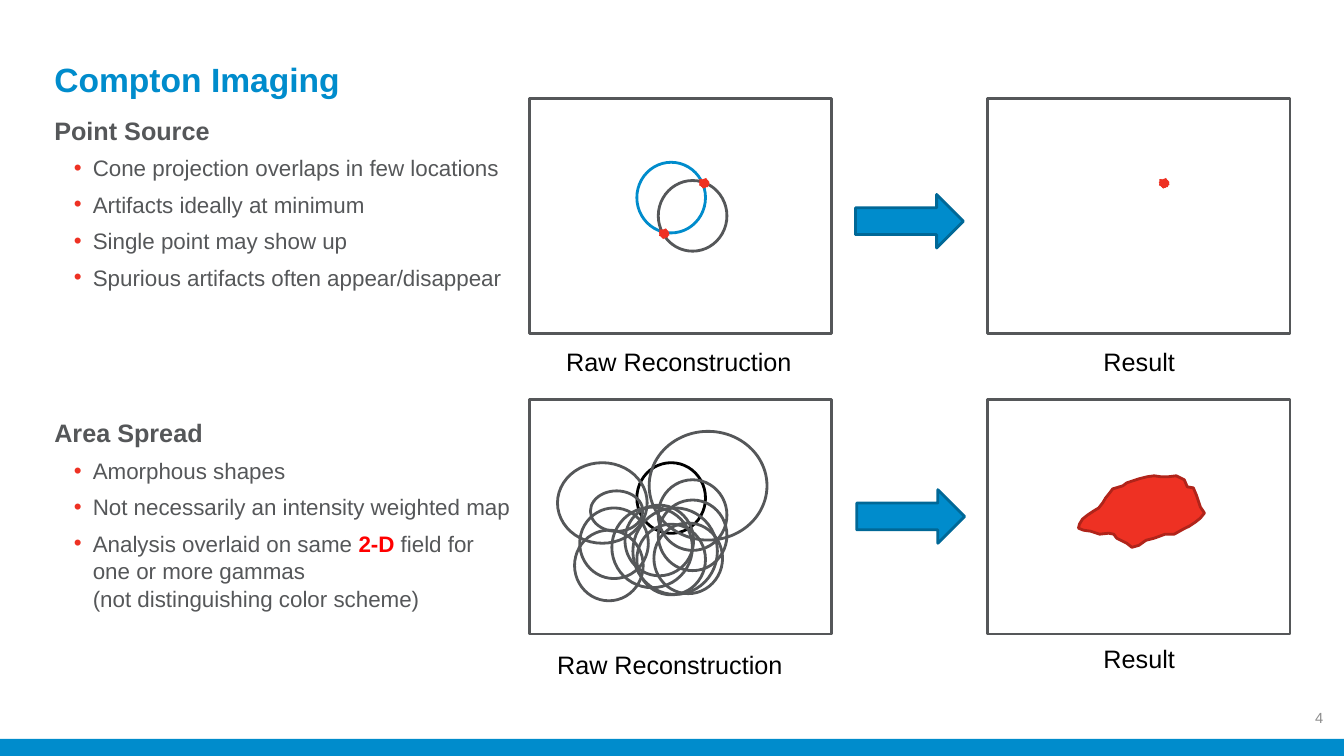
import pptx
import pptx.dml.color
import pptx.enum.shapes
import pptx.enum.text
import pptx.oxml
import pptx.oxml.ns
import pptx.util

Cm = pptx.util.Cm
Pt = pptx.util.Pt
SHAPE = pptx.enum.shapes.MSO_SHAPE
ALIGN = pptx.enum.text.PP_ALIGN
ANCHOR = pptx.enum.text.MSO_ANCHOR
BLUE, GRAY, RED, WHITE, BLACK = "008CCC", "555759", "EE3123", "FFFFFF", "000000"

deck = pptx.Presentation()
deck.slide_width, deck.slide_height = Cm(33.87), Cm(19.05)
page = deck.slides.add_slide(deck.slide_layouts[6])


def paint(shape, fill=None, line=None):
    """Set fill and outline from hex strings; None leaves the part empty."""
    shape.shadow.inherit = False
    if fill:
        shape.fill.solid()
        shape.fill.fore_color.rgb = pptx.dml.color.RGBColor.from_string(fill)
    else:
        shape.fill.background()
    if line:
        shape.line.color.rgb = pptx.dml.color.RGBColor.from_string(line)
        shape.line.width = Pt(2)
    else:
        shape.line.fill.background()


def write(para, text, size=16, color=GRAY, bold=False, align=None):
    """Add text to a paragraph; each newline becomes a line break."""
    para.alignment = align
    for number, piece in enumerate(text.split("\n")):
        if number:
            para.add_line_break()
        span = para.add_run()
        span.text = piece
        span.font.name = "Arial"
        span.font.size = Pt(size)
        span.font.bold = bold
        span.font.color.rgb = pptx.dml.color.RGBColor.from_string(color)


# Footer bar, title and page number
bar = page.shapes.add_shape(SHAPE.RECTANGLE, 0, Cm(18.62), deck.slide_width, Cm(0.43))
paint(bar, fill=BLUE)

title = page.shapes.add_textbox(Cm(1.12), Cm(0.84), Cm(31.6), Cm(1.65)).text_frame
title.word_wrap = True
title.vertical_anchor = ANCHOR.BOTTOM
title.margin_bottom = 0
write(title.paragraphs[0], "Compton Imaging", size=24, color=BLUE, bold=True)

number_box = page.shapes.add_textbox(Cm(31.9), Cm(17.58), Cm(1.7), Cm(1.02)).text_frame
number_box.word_wrap = True
number_box.vertical_anchor = ANCHOR.MIDDLE
write(number_box.paragraphs[0], "4", size=10.5, color="8C8C8C", align=ALIGN.RIGHT)

# Text sections: top, heading, bullets made of (text, format) spans
sections = [
    (2.74, "Point Source", [
        [("Cone projection overlaps in few locations", {})],
        [("Artifacts ideally at minimum", {})],
        [("Single point may show up", {})],
        [("Spurious artifacts often appear/disappear", {})],
    ]),
    (10.36, "Area Spread", [
        [("Amorphous shapes", {})],
        [("Not necessarily an intensity weighted map", {})],
        [("Analysis overlaid on same ", {}),
         ("2-D", {"color": "FF0000", "bold": True}),
         (" field for\none or more gammas\n(not distinguishing color scheme)", {})],
    ]),
]
for top, heading, bullets in sections:
    frame = page.shapes.add_textbox(Cm(1.12), Cm(top), Cm(12.2), Cm(5.5)).text_frame
    frame.word_wrap = True
    frame.paragraphs[0].line_spacing = 1.04
    write(frame.paragraphs[0], heading, size=18, bold=True)
    for spans in bullets:
        para = frame.add_paragraph()
        para.line_spacing = 1.04
        para.space_before = Pt(6)
        props = para._p.get_or_add_pPr()
        props.set("marL", str(Cm(0.97)))
        props.set("indent", str(-Cm(0.48)))
        namespace = pptx.oxml.ns.nsdecls("a")
        for xml in (f'<a:buClr {namespace}><a:srgbClr val="{RED}"/></a:buClr>',
                    f'<a:buFont {namespace} typeface="Arial"/>',
                    f'<a:buChar {namespace} char="•"/>'):
            props.append(pptx.oxml.parse_xml(xml))
        for text, style in spans:
            write(para, text, **style)

# Panels, two by two
for top in (2.49, 10.06):
    for left in (13.34, 24.89):
        panel = page.shapes.add_shape(SHAPE.RECTANGLE, Cm(left), Cm(top), Cm(7.62), Cm(5.92))
        paint(panel, fill=WHITE, line=GRAY)

# Captions
for left, top, width, caption in [
    (14.02, 8.61, 6.25, "Raw Reconstruction"),
    (27.56, 8.61, 2.34, "Result"),
    (13.79, 16.23, 6.25, "Raw Reconstruction"),
    (27.56, 16.08, 2.34, "Result"),
]:
    frame = page.shapes.add_textbox(Cm(left), Cm(top), Cm(width), Cm(1.02)).text_frame
    frame.word_wrap = False
    write(frame.paragraphs[0], caption, size=18, color=BLACK)

# Arrows from reconstruction to result
for left, top in [(21.56, 4.9), (21.59, 12.34)]:
    arrow = page.shapes.add_shape(SHAPE.RIGHT_ARROW, Cm(left), Cm(top), Cm(2.72), Cm(1.35))
    paint(arrow, fill=BLUE, line="006897")

# Cone projections: left, top, width, height, fill, line
ring = (1.73, 1.78)
cones = [
    (16.05, 4.09, *ring, None, BLUE),
    (16.59, 4.55, *ring, None, GRAY),
    (16.05, 11.66, *ring, WHITE, BLACK),
    (16.59, 12.09, *ring, None, GRAY),
    (15.75, 12.73, *ring, None, GRAY),
    (14.48, 13.36, *ring, None, GRAY),
    (14.88, 12.37, 1.32, 1.02, None, GRAY),
    (16.05, 13.21, *ring, None, GRAY),
    (16.36, 10.87, 2.97, 2.74, None, GRAY),
    (16.48, 13.18, *ring, None, GRAY),
    (16.59, 12.6, *ring, None, GRAY),
    (14.05, 11.66, 2.26, 2.03, None, GRAY),
    (15.95, 12.8, 2.13, 2.18, None, GRAY),
    (14.61, 12.8, *ring, None, GRAY),
    (15.42, 12.78, 2.03, 2.03, None, GRAY),
]
for left, top, width, height, fill, line in cones:
    cone = page.shapes.add_shape(SHAPE.OVAL, Cm(left), Cm(top), Cm(width), Cm(height))
    paint(cone, fill=fill, line=line)

# Source points
for left, top in [(16.64, 5.79), (17.65, 4.52), (29.24, 4.52)]:
    point = page.shapes.add_shape(SHAPE.EXPLOSION1, Cm(left), Cm(top), Cm(0.2), Cm(0.2))
    paint(point, fill=RED, line=RED)

# Spread area, outlined in units of 0.0254 cm
outline = [
    (1118, 479), (1130, 475), (1138, 473), (1145, 472), (1152, 473), (1159, 473),
    (1167, 472), (1175, 476), (1178, 483), (1184, 484), (1187, 491), (1191, 503),
    (1195, 509), (1191, 514), (1186, 518), (1180, 522), (1174, 525), (1165, 530),
    (1156, 530), (1145, 534), (1137, 536), (1130, 541), (1123, 543), (1118, 539),
    (1108, 534), (1105, 530), (1100, 529), (1091, 530), (1082, 527), (1075, 526),
    (1070, 524), (1071, 520), (1074, 515), (1079, 511), (1085, 507), (1090, 504),
    (1094, 499), (1097, 494), (1101, 489), (1104, 485), (1114, 482),
]
builder = page.shapes.build_freeform(*outline[0], scale=Cm(0.0254))
builder.add_line_segments(outline[1:], close=True)
paint(builder.convert_to_shape(), fill=RED, line="B0241A")

deck.save("out.pptx")
